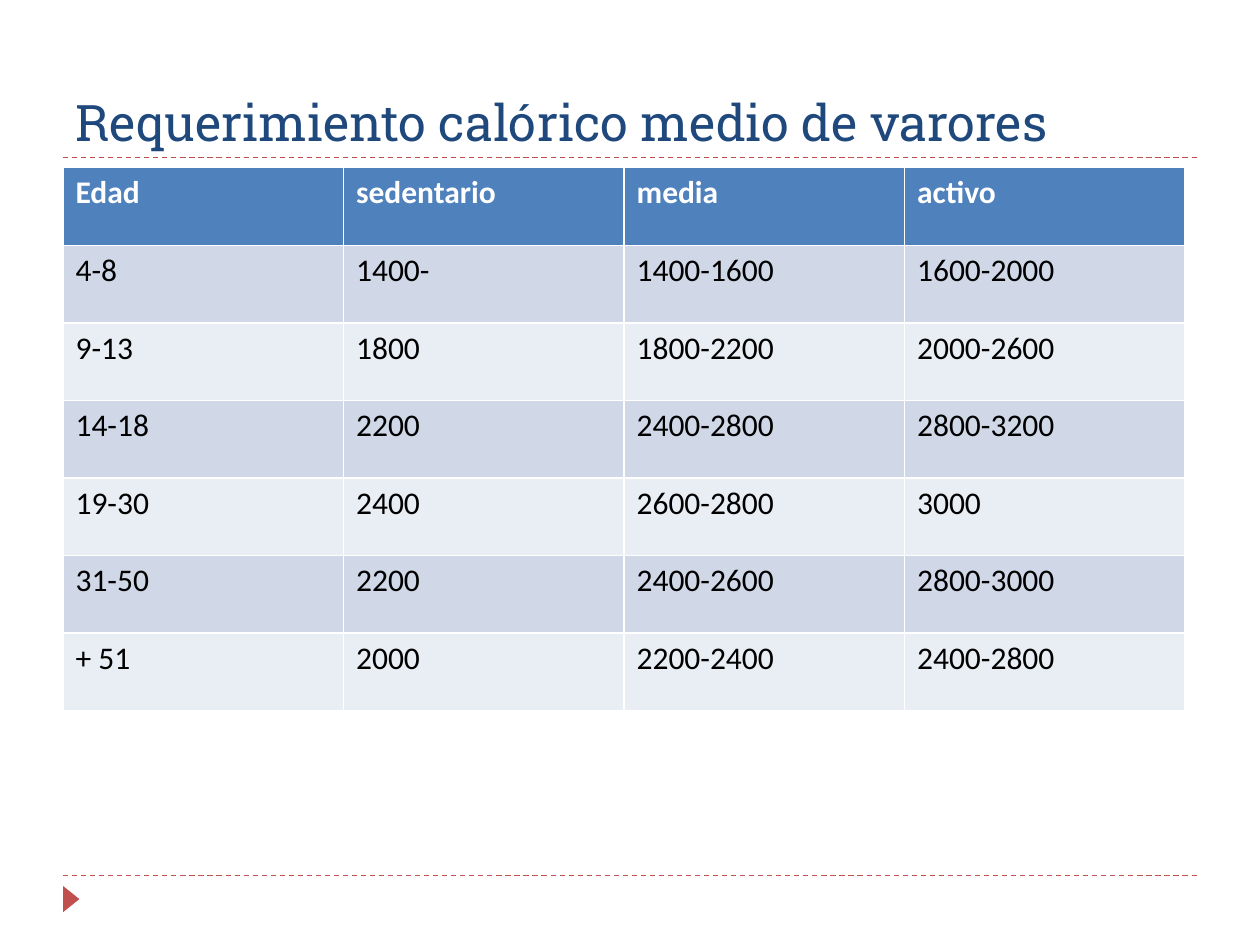
"""Build a slide with a table of average calorie needs by age and activity."""
import pptx
import pptx.util
import pptx.dml.color
import pptx.enum.dml
import pptx.enum.shapes
import pptx.enum.text
import pptx.oxml.ns
from lxml import etree
from pptx.util import Cm, Pt

TITLE = "Requerimiento calórico medio de varores"
ROWS = [
    ("Edad", "sedentario", "media", "activo"),
    ("4-8", "1400-", "1400-1600", "1600-2000"),
    ("9-13", "1800", "1800-2200", "2000-2600"),
    ("14-18", "2200", "2400-2800", "2800-3200"),
    ("19-30", "2400", "2600-2800", "3000"),
    ("31-50", "2200", "2400-2600", "2800-3000"),
    ("+ 51", "2000", "2200-2400", "2400-2800"),
]
NAVY, RED, BLUE = "1F497D", "C0504D", "4F81BD"
BANDS = ("E9EDF4", "D0D8E8")
LEFT, WIDTH = 1.27, 22.86
RULE_HEIGHTS = (3.18, 17.65)


def paint(color_format, color):
    color_format.rgb = pptx.dml.color.RGBColor.from_string(color)


def fill(item, color):
    item.fill.solid()
    paint(item.fill.fore_color, color)


def style(paragraph, font, size, color, bold=False):
    paragraph.font.name = font
    paragraph.font.size = Pt(size)
    paragraph.font.bold = bold
    paint(paragraph.font.color, color)


def add_rule(page, top):
    rule = page.shapes.add_connector(
        pptx.enum.shapes.MSO_CONNECTOR.STRAIGHT,
        Cm(LEFT), Cm(top), Cm(LEFT + WIDTH), Cm(top))
    paint(rule.line.color, RED)
    rule.line.width = Pt(0.75)
    rule.line.dash_style = pptx.enum.dml.MSO_LINE.DASH
    properties = rule._element.spPr
    etree.SubElement(properties, pptx.oxml.ns.qn("a:effectLst"))


def add_marker(page):
    marker = page.shapes.add_shape(
        pptx.enum.shapes.MSO_SHAPE.ISOSCELES_TRIANGLE,
        Cm(1.17), Cm(17.96), Cm(0.53), Cm(0.33))
    marker.rotation = 90
    marker.shadow.inherit = False
    fill(marker, RED)
    marker.line.fill.background()


def add_title(page):
    title = page.shapes.title
    title.left, title.top = Cm(LEFT), Cm(0.43)
    title.width, title.height = Cm(WIDTH), Cm(2.75)
    frame = title.text_frame
    frame.text = TITLE
    frame.word_wrap = True
    frame.auto_size = pptx.enum.text.MSO_AUTO_SIZE.NONE
    frame.vertical_anchor = pptx.enum.text.MSO_ANCHOR.BOTTOM
    paragraph = frame.paragraphs[0]
    paragraph.alignment = pptx.enum.text.PP_ALIGN.LEFT
    style(paragraph, "Roboto Slab", 28.8, NAVY)


def add_calorie_table(page):
    table = page.shapes.add_table(
        len(ROWS), len(ROWS[0]), Cm(LEFT), Cm(3.38), Cm(22.62), Cm(10.95)).table
    for row, texts in enumerate(ROWS):
        header = row == 0
        for column, text in enumerate(texts):
            cell = table.cell(row, column)
            cell.text = text
            fill(cell, BLUE if header else BANDS[row % 2])
            style(cell.text_frame.paragraphs[0], "Calibri", 18,
                  "FFFFFF" if header else "000000", header)


def main():
    deck = pptx.Presentation()
    deck.slide_width, deck.slide_height = Cm(25.4), Cm(19.05)
    page = deck.slides.add_slide(deck.slide_layouts[5])
    for top in RULE_HEIGHTS:
        add_rule(page, top)
    add_marker(page)
    add_title(page)
    add_calorie_table(page)
    deck.save("out.pptx")


if __name__ == "__main__":
    main()
